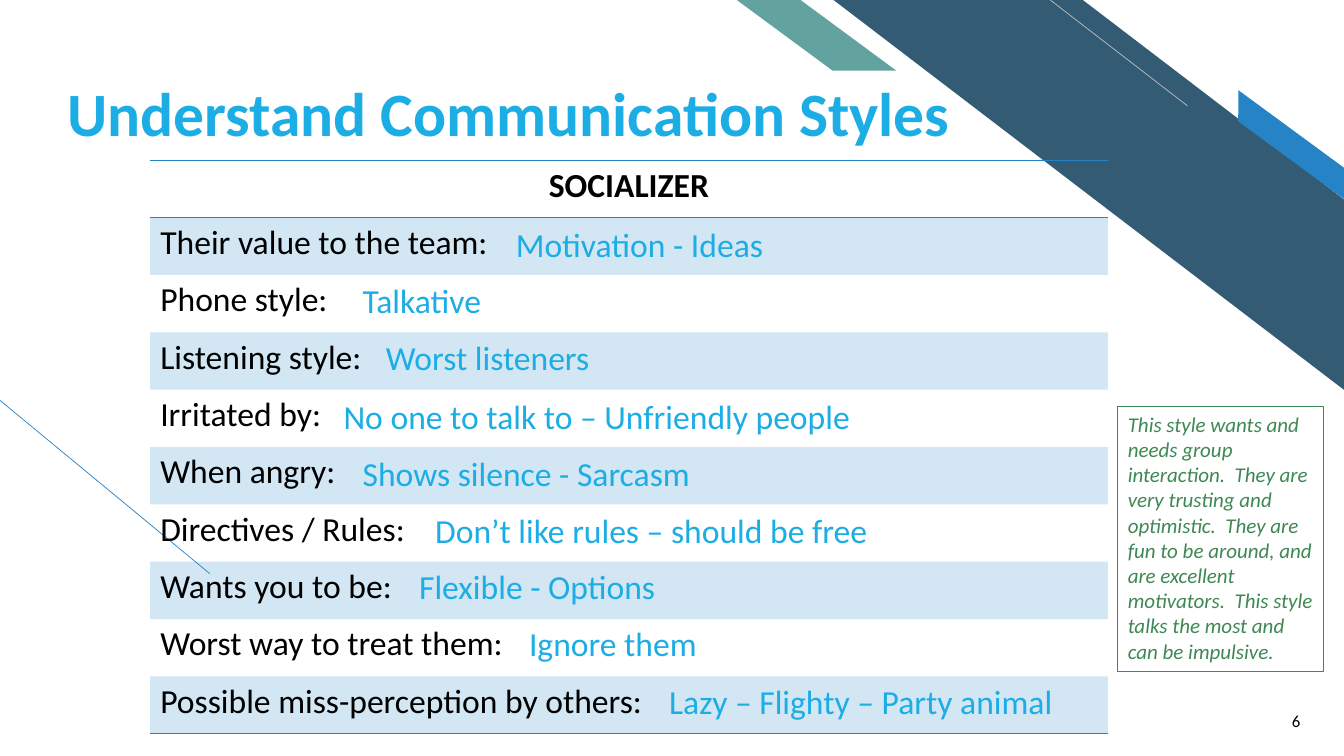
from dataclasses import dataclass
from typing import Optional

from lxml.etree import SubElement
from pptx import Presentation
from pptx.dml.color import RGBColor as RGB
from pptx.enum.shapes import MSO_CONNECTOR as Conn, MSO_SHAPE as Geo
from pptx.enum.text import MSO_ANCHOR as Anchor, MSO_AUTO_SIZE as Fit, PP_ALIGN as Align
from pptx.oxml import parse_xml
from pptx.oxml.ns import nsdecls, qn
from pptx.util import Pt


@dataclass(frozen=True)
class Theme:
    font: str = "Calibri"
    navy: str = "335B74"
    blue: str = "2683C6"
    teal: str = "62A39F"
    gray: str = "BFBFBF"
    sky: str = "1CADE4"
    green: str = "3E8853"
    black: str = "000000"
    head: int = 44
    body: int = 24
    note: int = 15
    page: int = 12


@dataclass(frozen=True)
class Box:
    left: float
    top: float
    width: float
    height: float

    def emu(self) -> tuple:
        return Pt(self.left), Pt(self.top), Pt(self.width), Pt(self.height)


@dataclass(frozen=True)
class Band:
    geo: Geo
    box: Box
    adj: float
    color: str
    turn: float = 0


@dataclass(frozen=True)
class Line:
    start: tuple
    end: tuple
    color: str


@dataclass(frozen=True)
class Trait:
    label: str
    answer: str
    left: float
    top: float
    width: float = 335.5


T = Theme()
ROW = 40.97
TABLE = Box(107.3, 114.5, 684, ROW * 10)
NO_GRID = "{2D5ABB26-0587-4C30-8999-92F81FD0307C}"

BANDS = [
    Band(Geo.DIAGONAL_STRIPE, Box(595.4, 0, 364.8, 278.6), 0.512, T.navy),
    Band(Geo.PARALLELOGRAM, Box(869, 94.3, 106.6, 18), 0.72, T.blue, 36.3),
    Band(Geo.PARALLELOGRAM, Box(526.3, 0, 113.8, 50.4), 1.356, T.teal),
]
LINES = [
    Line((149.8, 409.7), (0, 286), T.blue),
    Line((848.2, 75.6), (750.2, 0), T.gray),
]
TRAITS = [
    Trait("Their value to the team:", "Motivation - Ideas", 361.4, 156.2),
    Trait("Phone style:", "Talkative", 252, 196.6),
    Trait("Listening style:", "Worst listeners", 268.6, 236.9, 462.2),
    Trait("Irritated by:", "No one to talk to – Unfriendly people", 238.3, 279.4, 409.7),
    Trait("When angry:", "Shows silence - Sarcasm", 252, 319.7),
    Trait("Directives / Rules:", "Don’t like rules – should be free", 303.8, 360.7),
    Trait("Wants you to be:", "Flexible - Options", 292.3, 401, 199.4),
    Trait("Worst way to treat them:", "Ignore them", 370.8, 441.4, 409.7),
    Trait("Possible miss-perception by others:", "Lazy – Flighty – Party animal", 470.9, 483.1),
]
NOTE = (
    "This style wants and needs group interaction.  They are very trusting and "
    "optimistic.  They are fun to be around, and are excellent motivators.  "
    "This style talks the most and can be impulsive."
)


def write(frame, text: str, size: int, color: str, bold: bool = False,
          slant: bool = False, align: Align = Align.LEFT) -> None:
    para = frame.paragraphs[0]
    para.alignment = align
    run = para.add_run()
    run.text = text
    font = run.font
    font.name, font.size, font.bold, font.italic = T.font, Pt(size), bold, slant
    font.color.rgb = RGB.from_string(color)


def add_band(slide, band: Band) -> None:
    shape = slide.shapes.add_shape(band.geo, *band.box.emu())
    shape.shadow.inherit = False
    shape.adjustments[0] = band.adj
    shape.rotation = band.turn
    shape.fill.solid()
    shape.fill.fore_color.rgb = RGB.from_string(band.color)
    shape.line.fill.background()
    shape._element.spPr.find(qn("a:xfrm")).set("flipH", "1")


def add_line(slide, line: Line) -> None:
    ends = [Pt(n) for n in line.start + line.end]
    link = slide.shapes.add_connector(Conn.STRAIGHT, *ends)
    link.line.color.rgb = RGB.from_string(line.color)
    link.line.width = Pt(0.5)
    SubElement(link._element.spPr, qn("a:effectLst"))


def add_text(slide, box: Box):
    frame = slide.shapes.add_textbox(*box.emu()).text_frame
    frame.word_wrap = True
    return frame


def rule(cell, sides: str) -> None:
    props = cell._tc.get_or_add_tcPr()
    for spot, side in enumerate(sides):
        props.insert(spot, parse_xml(
            f'<a:ln{side} {nsdecls("a")} w="12700"><a:solidFill>'
            f'<a:srgbClr val="{T.blue}"/></a:solidFill></a:ln{side}>'))


def tint(cell, color: Optional[str]) -> None:
    if color is None:
        cell.fill.background()
        return
    cell.fill.solid()
    cell.fill.fore_color.rgb = RGB.from_string(color)
    hue = cell._tc.tcPr.find(".//" + qn("a:srgbClr"))
    SubElement(hue, qn("a:alpha")).set("val", "20000")


def add_grid(slide) -> None:
    grid = slide.shapes.add_table(len(TRAITS) + 1, 1, *TABLE.emu()).table
    grid.horz_banding = False
    grid._tbl.tblPr.find(qn("a:tableStyleId")).text = NO_GRID
    labels = ["SOCIALIZER"] + [trait.label for trait in TRAITS]
    for row, label in enumerate(labels):
        grid.rows[row].height = Pt(ROW)
        cell = grid.cell(row, 0)
        head = row == 0
        write(cell.text_frame, label, T.body, T.black, bold=head,
              align=Align.CENTER if head else Align.LEFT)
        tint(cell, T.blue if row % 2 else None)
    rule(grid.cell(0, 0), "TB")
    rule(grid.cell(len(TRAITS), 0), "B")


def add_title(slide) -> None:
    title = slide.shapes.title
    title.left, title.top, title.width, title.height = Box(41, 16.6, 655.9, 90.7).emu()
    frame = title.text_frame
    frame.word_wrap = True
    frame.vertical_anchor = Anchor.BOTTOM
    frame.margin_bottom = 0
    frame.paragraphs[0].line_spacing = 0.9
    write(frame, "Understand Communication Styles", T.head, T.sky, bold=True)


def add_note(slide) -> None:
    shape = slide.shapes.add_shape(Geo.RECTANGLE, *Box(798.5, 290.2, 146.9, 189.4).emu())
    shape.shadow.inherit = False
    shape.fill.background()
    shape.line.color.rgb = RGB.from_string(T.green)
    shape.line.width = Pt(0.75)
    frame = shape.text_frame
    frame.word_wrap = True
    frame.auto_size = Fit.SHAPE_TO_FIT_TEXT
    frame.vertical_anchor = Anchor.TOP
    write(frame, NOTE, T.note, T.green, slant=True)


def main() -> None:
    deck = Presentation()
    deck.slide_width, deck.slide_height = Pt(960), Pt(540)
    slide = deck.slides.add_slide(deck.slide_layouts[5])

    # Background bands and lines
    for band in BANDS:
        add_band(slide, band)
    for line in LINES:
        add_line(slide, line)

    # Title, table and answers
    add_title(slide)
    add_grid(slide)
    for trait in TRAITS:
        frame = add_text(slide, Box(trait.left, trait.top, trait.width, 36))
        frame.auto_size = Fit.SHAPE_TO_FIT_TEXT
        write(frame, trait.answer, T.body, T.sky)

    # Side note and page number
    add_note(slide)
    page = add_text(slide, Box(877.7, 500.4, 58.3, 28.8))
    page.vertical_anchor = Anchor.MIDDLE
    write(page, "6", T.page, T.black, align=Align.RIGHT)

    deck.save("out.pptx")


if __name__ == "__main__":
    main()
